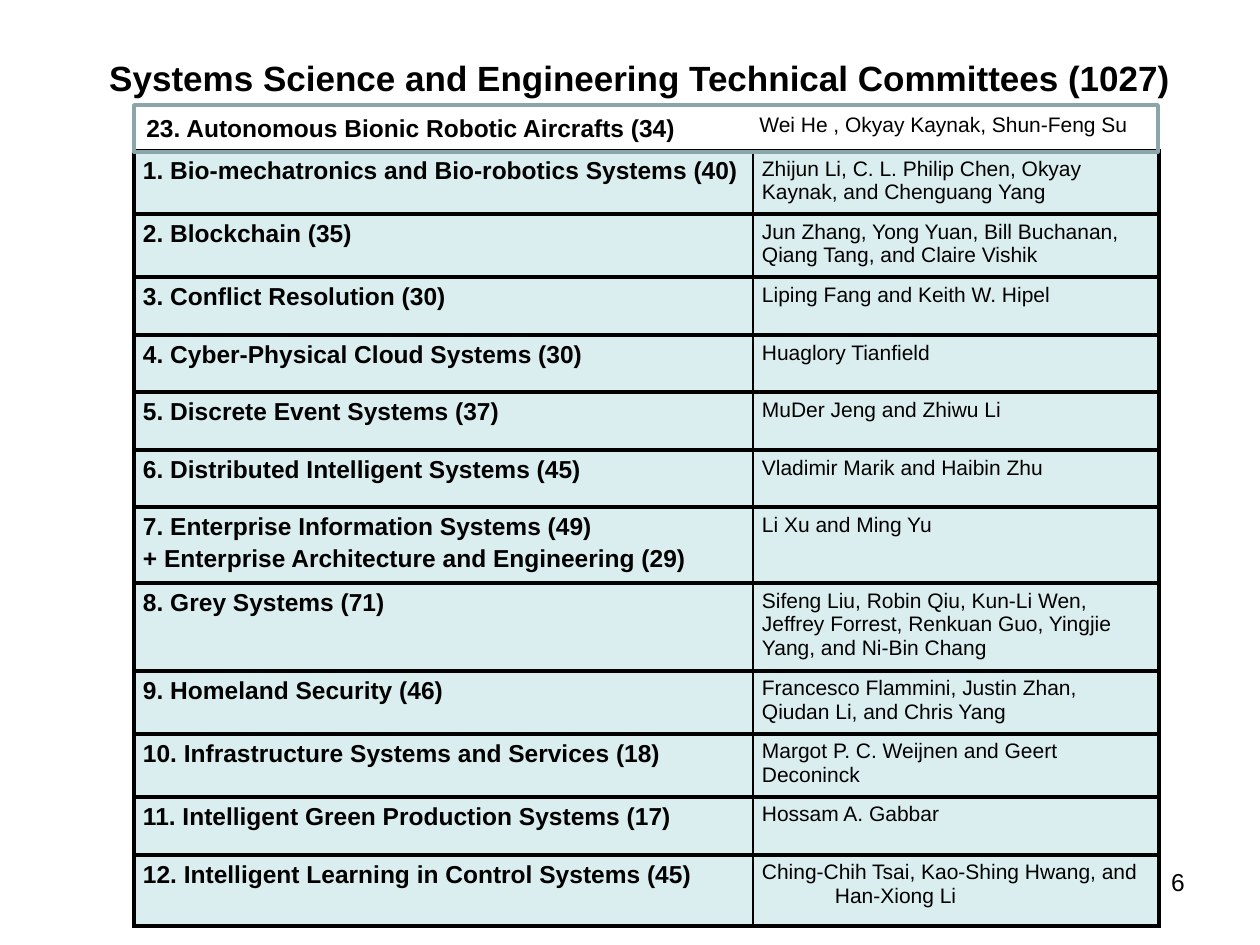
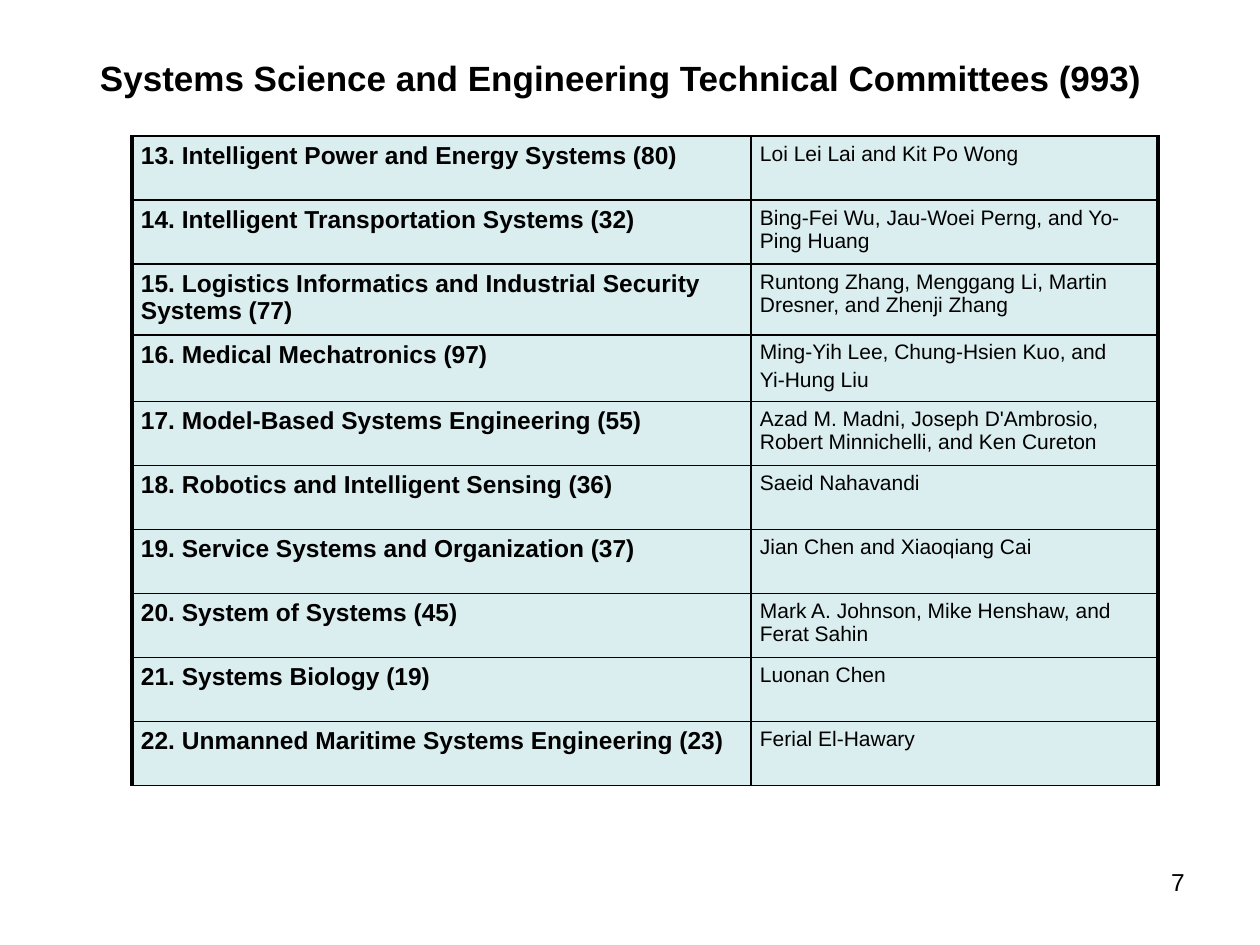
"""Build two slides of technical committee tables."""
from pptx import Presentation
from pptx import util as u
from pptx.dml.color import RGBColor
from pptx.enum import shapes, text
from pptx.oxml import parse_xml
from pptx.oxml.ns import nsdecls

PX = u.Inches(1) / 126
BLACK, PALE_BLUE, GREY_GREEN = "000000", "DAEDEF", "8AA6A8"
THIN, THICK = 1, 2.25
CELL_FORMAT = {
    "margin_left": round(9 * PX), "margin_right": round(9 * PX),
    "margin_top": round(6 * PX), "margin_bottom": round(6 * PX),
}
LEFT, CENTER, RIGHT = text.PP_ALIGN.LEFT, text.PP_ALIGN.CENTER, text.PP_ALIGN.RIGHT
TOP, MIDDLE = text.MSO_ANCHOR.TOP, text.MSO_ANCHOR.MIDDLE

SLIDES = [
    {
        "title": "Systems Science and Engineering Technical Committees (1027)",
        "title_width": 1114, "number": "6",
        "table_at": (134, 151), "columns": (619, 406), "rule": THICK,
        "rows": [
            (63, "1. Bio-mechatronics and Bio-robotics Systems (40)",
             "Zhijun Li, C. L. Philip Chen, Okyay Kaynak, and Chenguang Yang"),
            (63, "2. Blockchain (35)",
             "Jun Zhang, Yong Yuan, Bill Buchanan, Qiang Tang, and Claire Vishik"),
            (58, "3. Conflict Resolution (30)", "Liping Fang and Keith W. Hipel"),
            (57, "4. Cyber-Physical Cloud Systems (30)", "Huaglory Tianfield"),
            (58, "5. Discrete Event Systems (37)", "MuDer Jeng and Zhiwu Li"),
            (57, "6. Distributed Intelligent Systems (45)", "Vladimir Marik and Haibin Zhu"),
            (76, "7. Enterprise Information Systems (49)\n"
             "+ Enterprise Architecture and Engineering (29)", "Li Xu and Ming Yu"),
            (88, "8. Grey Systems (71)",
             "Sifeng Liu, Robin Qiu, Kun-Li Wen, Jeffrey Forrest, Renkuan Guo, "
             "Yingjie Yang, and Ni-Bin Chang"),
            (63, "9. Homeland Security (46)",
             "Francesco Flammini, Justin Zhan, Qiudan Li, and Chris Yang"),
            (63, "10. Infrastructure Systems and Services (18)",
             "Margot P. C. Weijnen and Geert Deconinck"),
            (58, "11. Intelligent Green Production Systems (17)", "Hossam A. Gabbar"),
            (71, "12. Intelligent Learning in Control Systems (45)",
             "Ching-Chih Tsai, Kao-Shing Hwang, and Han-Xiong Li"),
        ],
        "hanging_row": 11,
    },
    {
        "title": "Systems Science and Engineering Technical Committees (993)",
        "title_width": 1076, "number": "7",
        "table_at": (132, 136), "columns": (619, 407), "rule": THIN,
        "rows": [
            (64, "13. Intelligent Power and Energy Systems (80)", "Loi Lei Lai and Kit Po Wong"),
            (64, "14. Intelligent Transportation Systems (32)",
             "Bing-Fei Wu, Jau-Woei Perng, and Yo-Ping Huang"),
            (67, "15. Logistics Informatics and Industrial Security Systems (77)",
             "Runtong Zhang, Menggang Li, Martin Dresner, and Zhenji Zhang"),
            (64, "16. Medical Mechatronics (97)",
             "Ming-Yih Lee, Chung-Hsien Kuo, and\nYi-Hung Liu"),
            (64, "17. Model-Based Systems Engineering (55)",
             "Azad M. Madni, Joseph D'Ambrosio, Robert Minnichelli, and Ken Cureton"),
            (64, "18. Robotics and Intelligent Sensing (36)", "Saeid Nahavandi"),
            (64, "19. Service Systems and Organization (37)", "Jian Chen and Xiaoqiang Cai"),
            (64, "20. System of Systems (45)", "Mark A. Johnson, Mike Henshaw, and Ferat Sahin"),
            (64, "21. Systems Biology (19)", "Luonan Chen"),
            (64, "22. Unmanned Maritime Systems Engineering (23)", "Ferial El-Hawary"),
        ],
        "hanging_row": None,
    },
]


def rgb(color):
    """Turn a hex string into a colour."""
    return RGBColor.from_string(color)


def write(frame, content, size, bold=False, align=LEFT):
    """Fill a text frame, one paragraph a line."""
    frame.text = content
    for index, paragraph in enumerate(frame.paragraphs):
        paragraph.alignment = align
        if index:
            paragraph.space_before = u.Pt(size * 0.2)
        font_format = {"name": "Arial", "size": u.Pt(size), "bold": bold}
        for name, value in font_format.items():
            setattr(paragraph.runs[0].font, name, value)
        paragraph.runs[0].font.color.rgb = rgb(BLACK)


presentation = Presentation()
presentation.slide_width = round(1260 * PX)
presentation.slide_height = round(945 * PX)

for content in SLIDES:
    slide = presentation.slides.add_slide(presentation.slide_layouts[6])

    rows, columns, rule = content["rows"], content["columns"], content["rule"]
    left, top = content["table_at"]
    box = (left, top, sum(columns), sum(row[0] for row in rows))
    table = slide.shapes.add_table(
        len(rows), len(columns), *(round(length * PX) for length in box)).table
    table.first_row = table.horz_banding = False
    for column, width in zip(table.columns, columns):
        column.width = round(width * PX)
    for row_index, (height, committee, chairs) in enumerate(rows):
        table.rows[row_index].height = round(height * PX)
        for column_index, words in enumerate((committee, chairs)):
            cell = table.cell(row_index, column_index)
            is_committee = column_index == 0
            write(cell.text_frame, words, 14 if is_committee else 12, is_committee)
            for name, value in CELL_FORMAT.items():
                setattr(cell, name, value)
            borders = {"L": THICK if is_committee else THIN,
                       "R": THIN if is_committee else THICK, "T": rule, "B": rule}
            for side, width in borders.items():
                cell._tc.get_or_add_tcPr().append(parse_xml(
                    f'<a:ln{side} {nsdecls("a")} w="{u.Pt(width)}"><a:solidFill>'
                    f'<a:srgbClr val="{BLACK}"/></a:solidFill></a:ln{side}>'))
            cell.fill.solid()
            cell.fill.fore_color.rgb = rgb(PALE_BLUE)
    if content["hanging_row"] is not None:
        paragraph = table.cell(content["hanging_row"], 1).text_frame.paragraphs[0]
        indent = round(73 * PX)
        for name, value in {"marL": indent, "indent": -indent}.items():
            paragraph._p.get_or_add_pPr().set(name, str(value))

    labels = [
        ((83, 50, content["title_width"], 55), content["title"], 20, True, CENTER, TOP, True),
        ((903, 861, 294, 66), content["number"], 14, False, RIGHT, TOP, True),
    ]
    if content is SLIDES[0]:
        labels += [
            ((134, 107, 557, 72), "23. Autonomous Bionic Robotic Aircrafts (34)",
             14, True, LEFT, TOP, False),
            ((747, 105, 431, 38), "Wei He , Okyay Kaynak, Shun-Feng Su",
             12, False, LEFT, MIDDLE, True),
        ]
        outline = slide.shapes.add_shape(
            shapes.MSO_SHAPE.RECTANGLE, *(round(length * PX) for length in (134, 105, 1024, 47)))
        outline.shadow.inherit = False
        outline.fill.background()
        outline.line.color.rgb = rgb(GREY_GREEN)
        outline.line.width = u.Pt(2)
    for box, words, size, bold, align, anchor, wrap in labels:
        shape = slide.shapes.add_textbox(*(round(length * PX) for length in box))
        write(shape.text_frame, words, size, bold, align)
        for name, value in {"word_wrap": wrap, "vertical_anchor": anchor}.items():
            setattr(shape.text_frame, name, value)

presentation.save("out.pptx")
